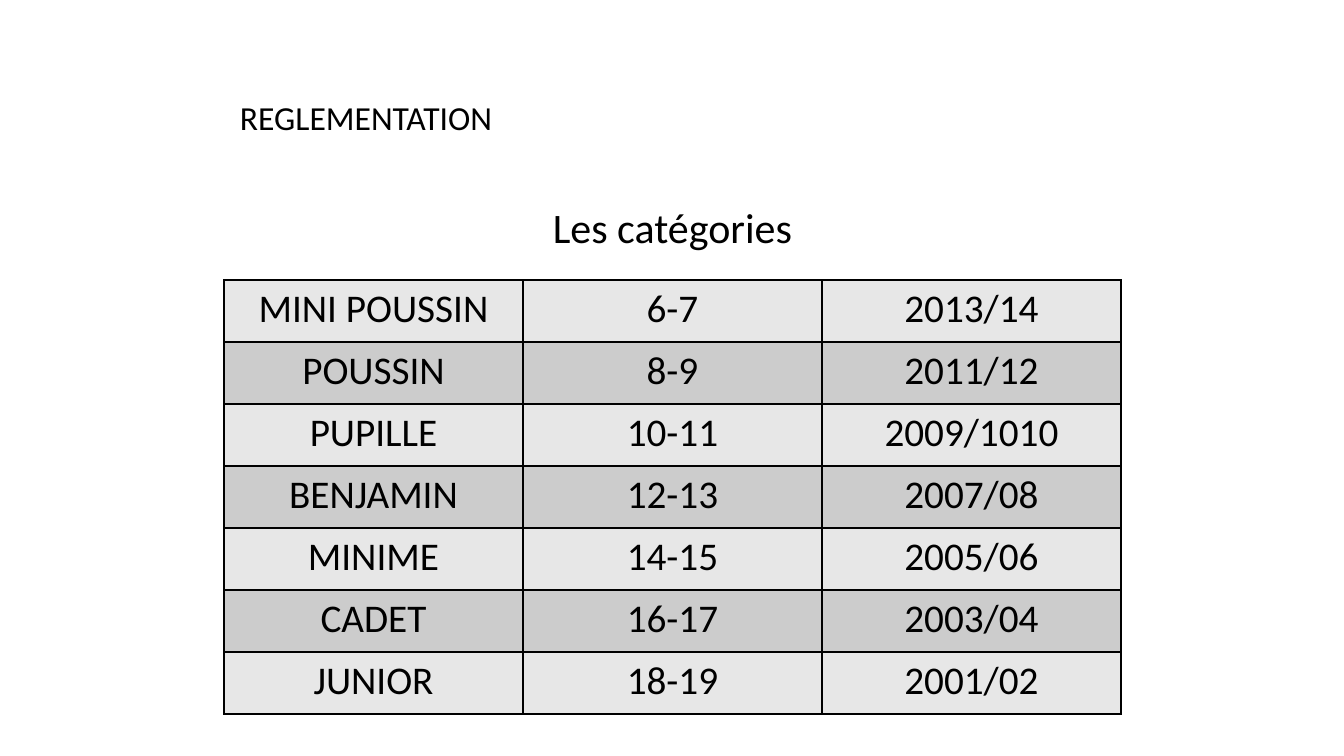
from typing import NamedTuple

from lxml.etree import SubElement
from pptx import Presentation
from pptx.dml.color import RGBColor
from pptx.enum.text import MSO_ANCHOR, MSO_AUTO_SIZE, PP_ALIGN
from pptx.oxml.ns import qn
from pptx.util import Emu, Pt

FONT = "Calibri"
BLACK = "000000"
ROW_FILLS = ("E7E7E7", "CCCCCC")
COL_W, ROW_H = 299, 62


class Category(NamedTuple):
    name: str
    ages: str
    birth_years: str


CATEGORIES = [
    Category("MINI POUSSIN", "6-7", "2013/14"),
    Category("POUSSIN", "8-9", "2011/12"),
    Category("PUPILLE", "10-11", "2009/1010"),
    Category("BENJAMIN", "12-13", "2007/08"),
    Category("MINIME", "14-15", "2005/06"),
    Category("CADET", "16-17", "2003/04"),
    Category("JUNIOR", "18-19", "2001/02"),
]


def px(n: int) -> Emu:
    return Emu(round(n * 12192000 / 1344))


def rgb(color: str) -> RGBColor:
    return RGBColor.from_string(color)


def write(tf, text: str, size: int, align=PP_ALIGN.CENTER, spacing: float = 1.0) -> None:
    p = tf.paragraphs[0]
    p.text = text
    p.alignment = align
    p.line_spacing = spacing
    p.font.name = FONT
    p.font.size = Pt(size)
    p.font.color.rgb = rgb(BLACK)


def add_borders(cell, color: str, width: float) -> None:
    tcPr = cell._tc.get_or_add_tcPr()
    for side in ("a:lnL", "a:lnR", "a:lnT", "a:lnB"):
        ln = SubElement(tcPr, qn(side), w=str(Pt(width)))
        SubElement(SubElement(ln, qn("a:solidFill")), qn("a:srgbClr"), val=color)


def add_categories(s, left: int, top: int) -> None:
    rows, cols = len(CATEGORIES), len(Category._fields)
    table = s.shapes.add_table(rows, cols, px(left), px(top),
                               px(cols * COL_W), px(rows * ROW_H)).table
    table.first_row = table.horz_banding = False
    for col in table.columns:
        col.width = px(COL_W)
    for i, category in enumerate(CATEGORIES):
        table.rows[i].height = px(ROW_H)
        for j, text in enumerate(category):
            cell = table.cell(i, j)
            write(cell.text_frame, text, 28)
            # Borders come before the fill in the cell properties
            add_borders(cell, BLACK, 1)
            cell.fill.solid()
            cell.fill.fore_color.rgb = rgb(ROW_FILLS[i % 2])


def main() -> None:
    prs = Presentation()
    prs.slide_width, prs.slide_height = px(1344), px(756)
    s = prs.slides.add_slide(prs.slide_layouts[5])

    # Title, indented inside its box
    title = s.shapes.title
    title.left, title.top, title.width, title.height = px(93), px(40), px(1164), px(142)
    tf = title.text_frame
    tf.auto_size = MSO_AUTO_SIZE.NONE
    tf.vertical_anchor = MSO_ANCHOR.MIDDLE
    tf.margin_left, tf.margin_top = px(147), px(22)
    write(tf, "REGLEMENTATION", 24, PP_ALIGN.LEFT, 0.9)

    # Table heading
    tf = s.shapes.add_textbox(px(93), px(202), px(1159), px(543)).text_frame
    tf.word_wrap = True
    write(tf, "Les catégories", 30, spacing=0.9)

    # Age categories
    add_categories(s, 224, 280)

    prs.save("out.pptx")


if __name__ == "__main__":
    main()
